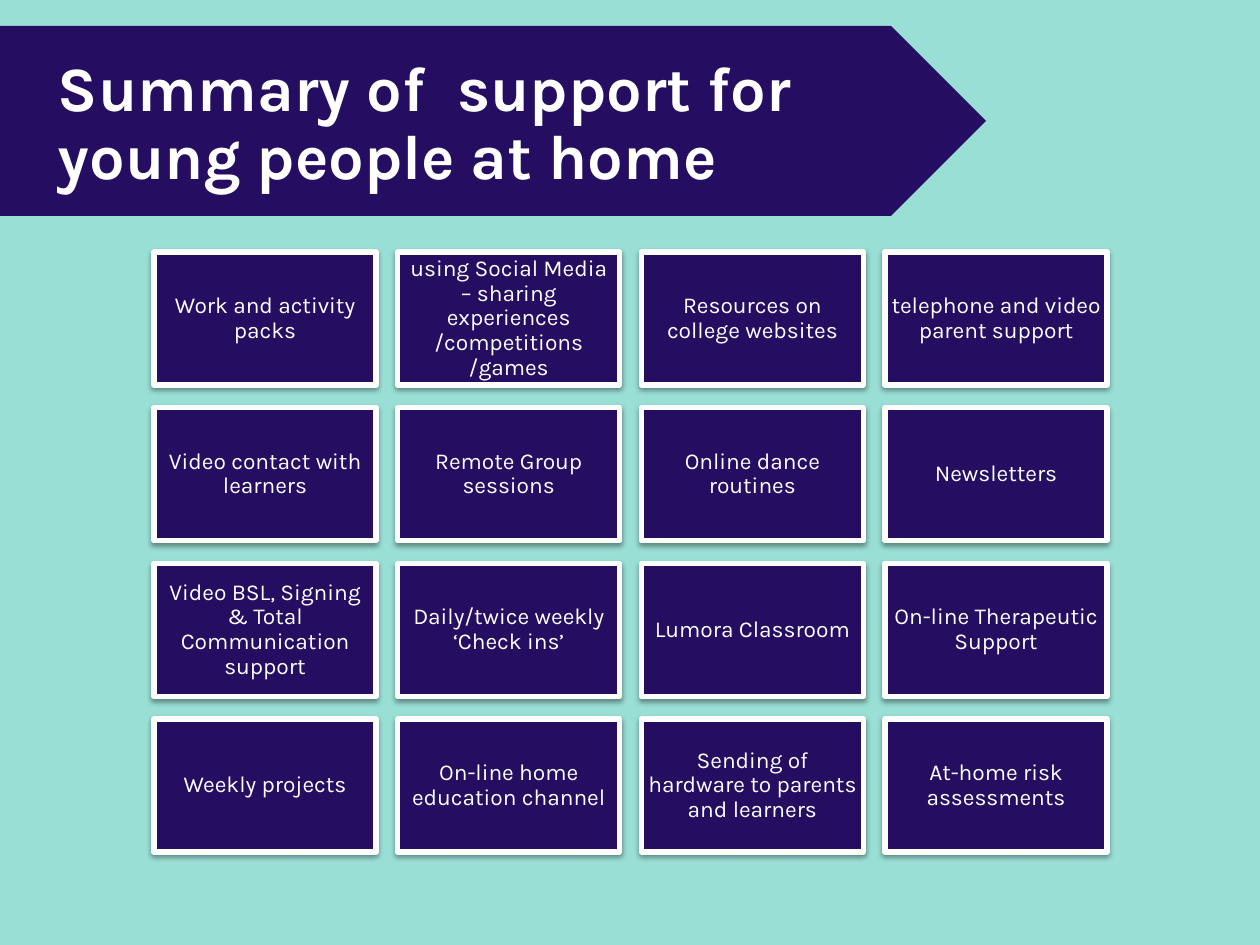
from lxml.etree import SubElement
from pptx import Presentation
from pptx.dml.color import RGBColor
from pptx.enum.shapes import MSO_SHAPE as Shape
from pptx.enum.text import MSO_ANCHOR as Anchor, PP_ALIGN as Align
from pptx.oxml.ns import qn
from pptx.util import Pt

EMU_PER_PX = 914400 / 126
COLOURS = {"page": "99DFD5", "panel": "250E62", "light": "FFFFFF", "shadow": "000000"}
TITLE = "Summary of  support for young people at home"
SUPPORT = [
    ["Work and activity packs", "using Social Media – sharing experiences /competitions /games",
     "Resources on college websites", "telephone and video parent support"],
    ["Video contact with learners", "Remote Group sessions",
     "Online dance routines", "Newsletters"],
    ["Video BSL, Signing & Total Communication support", "Daily/twice weekly ‘Check ins’",
     "Lumora Classroom", "On-line Therapeutic Support"],
    ["Weekly projects", "On-line home education channel",
     "Sending of hardware to parents and learners", "At-home risk assessments"],
]
TITLE_FONT = {"name": "Karla", "size": Pt(36), "bold": True}
TILE_FONT = {"name": "Karla", "size": Pt(13), "bold": False}


def px(*lengths):
    """Turn pixel lengths into EMU."""
    return [round(length * EMU_PER_PX) for length in lengths]


def colour(name):
    """Look up a named colour."""
    return RGBColor.from_string(COLOURS[name])


def set_format(target, values):
    """Set each attribute named in a dict of format values."""
    for name, value in values.items():
        setattr(target, name, value)


def write_text(shape, text, font, align, side, edge):
    """Write one paragraph, centred vertically, with the given insets."""
    frame = shape.text_frame
    side, edge = px(side, edge)
    set_format(frame, {"word_wrap": True, "vertical_anchor": Anchor.MIDDLE,
                       "margin_left": side, "margin_right": side,
                       "margin_top": edge, "margin_bottom": edge})
    para = frame.paragraphs[0]
    set_format(para, {"alignment": align, "line_spacing": 0.9})
    span = para.add_run()
    span.text = text
    set_format(span.font, font)
    span.font.color.rgb = colour("light")


def add_panel(page, kind, box):
    """Add a dark filled shape with no shadow."""
    panel = page.shapes.add_shape(kind, *px(*box))
    panel.shadow.inherit = False
    panel.fill.solid()
    panel.fill.fore_color.rgb = colour("panel")
    return panel


def add_soft_shadow(shape):
    """Give a shape a faint shadow falling straight down."""
    effects = shape._element.spPr.find(qn("a:effectLst"))
    shadow = SubElement(effects, qn("a:outerShdw"), blurRad=str(Pt(3.1)),
                        dist=str(Pt(1.6)), dir="5400000", rotWithShape="0")
    tint = SubElement(shadow, qn("a:srgbClr"), val=COLOURS["shadow"])
    SubElement(tint, qn("a:alpha"), val="38000")


def add_banner(page, box, title):
    """Add the arrow banner and the title over it."""
    left, top, width, height = box
    add_panel(page, Shape.PENTAGON, box).line.fill.background()
    title_box = page.shapes.add_textbox(*px(left + 45, top + 24, width - 46, height - 39))
    write_text(title_box, title, TITLE_FONT, Align.LEFT, 13, 6)


def add_tile(page, box, text):
    """Add one framed tile with centred text."""
    tile = add_panel(page, Shape.RECTANGLE, box)
    tile.line.color.rgb = colour("light")
    tile.line.width = Pt(3)
    add_soft_shadow(tile)
    write_text(tile, text, TILE_FONT, Align.CENTER, 6, 6)


def add_tile_grid(page, box, rows, tile_width, tile_height):
    """Spread the tiles evenly over the box."""
    left, top, width, height = box
    step_x = (width - tile_width) / (len(rows[0]) - 1)
    step_y = (height - tile_height) / (len(rows) - 1)
    for row, texts in enumerate(rows):
        for column, text in enumerate(texts):
            place = (left + column * step_x, top + row * step_y, tile_width, tile_height)
            add_tile(page, place, text)


def main():
    """Build and save the deck."""
    deck = Presentation()
    deck.slide_width, deck.slide_height = px(1260, 945)
    page = deck.slides.add_slide(deck.slide_layouts[6])
    page.background.fill.solid()
    page.background.fill.fore_color.rgb = colour("page")
    add_banner(page, (0, 26, 986, 190), TITLE)
    add_tile_grid(page, (154, 252, 953, 600), SUPPORT, 222, 133)
    deck.save("out.pptx")


if __name__ == "__main__":
    main()
